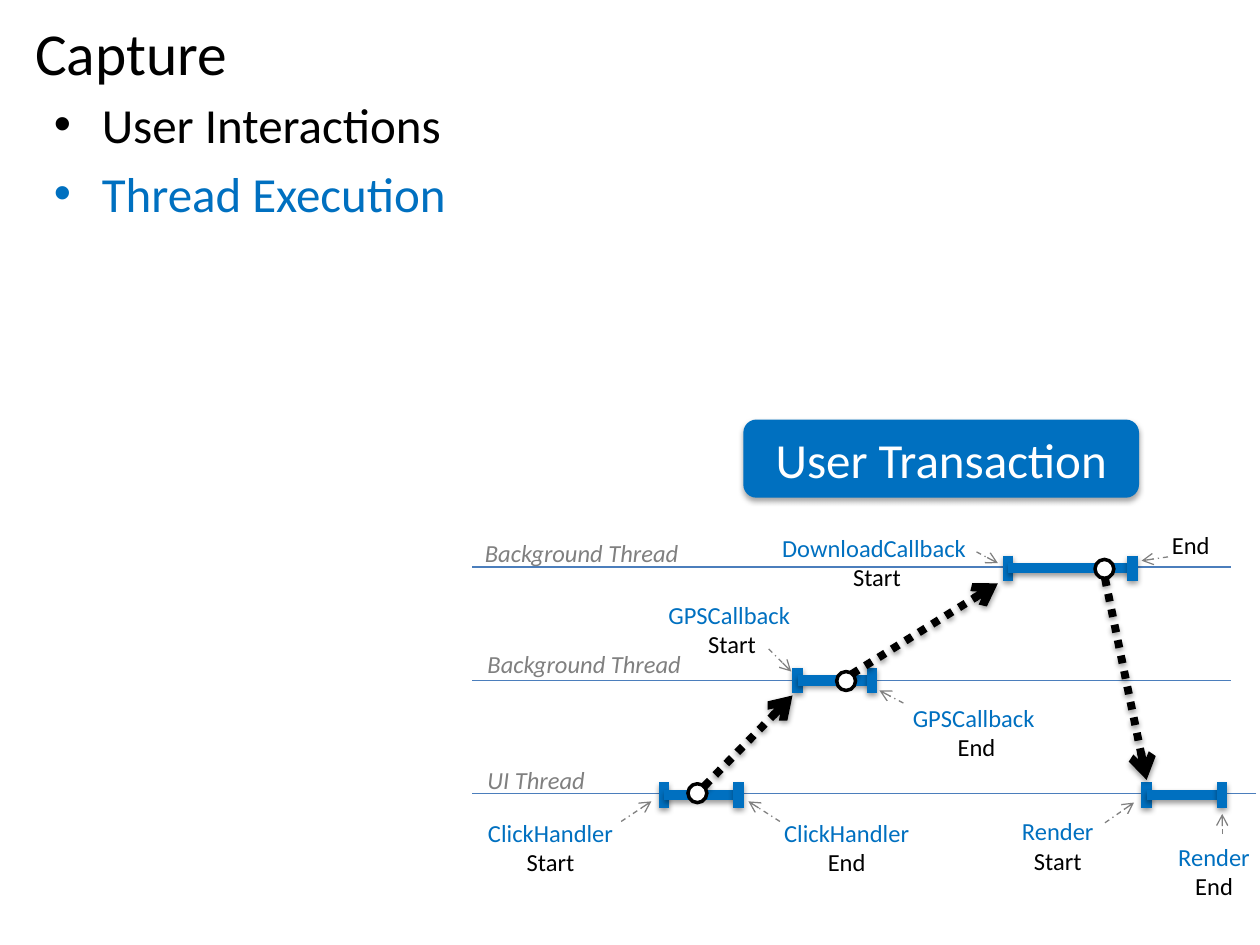
from lxml.etree import SubElement
from pptx import Presentation
from pptx.dml.color import RGBColor
from pptx.enum.dml import MSO_LINE
from pptx.enum.shapes import MSO_CONNECTOR, MSO_SHAPE
from pptx.enum.text import MSO_ANCHOR, PP_ALIGN
from pptx.oxml.ns import qn
from pptx.util import Pt

PX = 9144  # 100 px to the inch
HUES = {"black": "000000", "white": "FFFFFF", "blue": "0070C0",
        "grey": "808080", "rule": "4B7EBC"}


def hue(name):
    return RGBColor.from_string(HUES[name])


class Board:
    font = "Calibri"

    def __init__(self, slide):
        self.slide = slide
        self.shapes = slide.shapes

    def style(self, par, size, color, align=PP_ALIGN.LEFT, italic=False):
        par.alignment = align
        font = par.font
        font.name, font.size, font.italic = self.font, Pt(size), italic
        font.color.rgb = hue(color)

    def title(self, text, x, y, w, h):
        shape = self.shapes.title
        shape.left, shape.top, shape.width, shape.height = (
            n * PX for n in (x, y, w, h))
        frame = shape.text_frame
        frame.text = text
        frame.word_wrap = False
        frame.vertical_anchor = MSO_ANCHOR.TOP
        self.style(frame.paragraphs[0], 34, "black")

    def text(self, x, y, w, h, rows, size=14, align=PP_ALIGN.CENTER,
             italic=False, wrap=False):
        """Add a text box; rows are pairs of text and colour."""
        box = self.shapes.add_textbox(x * PX, y * PX, w * PX, h * PX)
        frame = box.text_frame
        frame.word_wrap = wrap
        frame.text = "\n".join(words for words, _ in rows)
        for par, (_, color) in zip(frame.paragraphs, rows):
            self.style(par, size, color, align, italic)
        return frame

    def bullets(self, x, y, w, h, rows):
        frame = self.text(x, y, w, h, rows, 28, PP_ALIGN.LEFT, wrap=True)
        for par in frame.paragraphs:
            par.space_before = Pt(5.6)
            props = par._p.get_or_add_pPr()
            props.set("marL", str(38 * PX))
            props.set("indent", str(-38 * PX))
            SubElement(props, qn("a:buFont"), typeface="Arial")
            SubElement(props, qn("a:buChar"), char="•")

    def shadow(self, shape, alpha=38, dist=20000):
        """Replace the theme effect; an alpha of 0 leaves no shadow."""
        effects = SubElement(shape._element.spPr, qn("a:effectLst"))
        if alpha:
            outer = SubElement(effects, qn("a:outerShdw"), blurRad="40000",
                               dist=str(dist), dir="5400000", rotWithShape="0")
            color = SubElement(outer, qn("a:srgbClr"), val=HUES["black"])
            SubElement(color, qn("a:alpha"), val=str(alpha * 1000))

    def line(self, ends, color, width, dash=None, arrow=False, alpha=0):
        link = self.shapes.add_connector(
            MSO_CONNECTOR.STRAIGHT, *(n * PX for n in ends))
        link.line.color.rgb = hue(color)
        link.line.width = Pt(width)
        if dash:
            link.line.dash_style = dash
        if arrow:
            SubElement(link.line._get_or_add_ln(), qn("a:tailEnd"), type="arrow")
        self.shadow(link, alpha)

    def span(self, start, end, y):
        """Draw a stretch of work with a cap at each end."""
        for ends in ((start, y - 10, start, y + 10), (start, y, end, y),
                     (end, y - 10, end, y + 10)):
            self.line(ends, "blue", 6, alpha=38)

    def dot(self, x, y, size=15):
        dot = self.shapes.add_shape(
            MSO_SHAPE.OVAL, x * PX, y * PX, size * PX, size * PX)
        dot.shadow.inherit = False
        dot.fill.solid()
        dot.fill.fore_color.rgb = hue("white")
        dot.line.color.rgb = hue("black")
        dot.line.width = Pt(2)

    def badge(self, text, x, y, w, h):
        box = self.shapes.add_shape(
            MSO_SHAPE.ROUNDED_RECTANGLE, x * PX, y * PX, w * PX, h * PX)
        box.fill.solid()
        box.fill.fore_color.rgb = hue("blue")
        box.line.fill.background()
        self.shadow(box, 35, 23000)
        frame = box.text_frame
        frame.text = text
        frame.vertical_anchor = MSO_ANCHOR.MIDDLE
        self.style(frame.paragraphs[0], 28, "white", PP_ALIGN.CENTER)


THREADS = [  # name, label x, y, width, line y, line end
    ("Background Thread", 375, 422, 178, 450, 977),
    ("Background Thread", 377, 510, 178, 540, 977),
    ("UI Thread", 377, 602, 99, 630, 997),
]
SPANS = [(527, 586, 631), (633, 692, 540), (800, 899, 451), (910, 970, 631)]
CALLS = [(559, 624, 629, 552), (676, 535, 792, 463), (877, 459, 910, 619)]
DOTS = [(546, 622), (664, 533), (869, 444)]
EVENTS = [  # handler, phase, x, y, width, pointer
    ("ClickHandler", "Start", 375, 644, 124, (493, 652, 517, 636)),
    ("ClickHandler", "End", 610, 644, 124, (619, 652, 594, 636)),
    ("GPSCallback ", "Start", 517, 471, 128, (610, 515, 628, 533)),
    ("GPSCallback ", "End", 711, 553, 128, (717, 558, 698, 548)),
    ("DownloadCallback ", "Start", 608, 418, 176, (775, 438, 792, 447)),
    ("", "End", 919, 416, 52, (927, 442, 906, 445)),
    ("Render", "Start", 800, 643, 79, (877, 653, 900, 637)),
    ("Render", "End", 924, 663, 79, (970, 662, 970, 646)),
]


def main():
    deck = Presentation()
    deck.slide_width, deck.slide_height = 1000 * PX, 750 * PX
    board = Board(deck.slides.add_slide(deck.slide_layouts[5]))
    board.title("Capture", 18, 8, 174, 67)
    board.bullets(33, 70, 658, 358, [("User Interactions", "black"),
                                     ("Thread Execution", "blue")])
    for name, x, y, w, level, end in THREADS:
        board.line((end, level, 375, level), "rule", 0.75)
        board.text(x, y, w, 34, [(name, "grey")], align=PP_ALIGN.LEFT,
                   italic=True)
    for span in SPANS:
        board.span(*span)
    for call in CALLS:
        board.line(call, "black", 4.5, MSO_LINE.ROUND_DOT, True, 38)
    for dot in DOTS:
        board.dot(*dot)
    board.badge("User Transaction", 590, 333, 314, 62)
    for name, phase, x, y, w, ends in EVENTS:
        rows = [(name, "blue")] if name else []
        rows.append((phase, "black"))
        board.text(x, y, w, 57 if name else 34, rows)
        board.line(ends, "grey", 0.75, MSO_LINE.DASH_DOT, True)
    deck.save("out.pptx")


if __name__ == "__main__":
    main()
